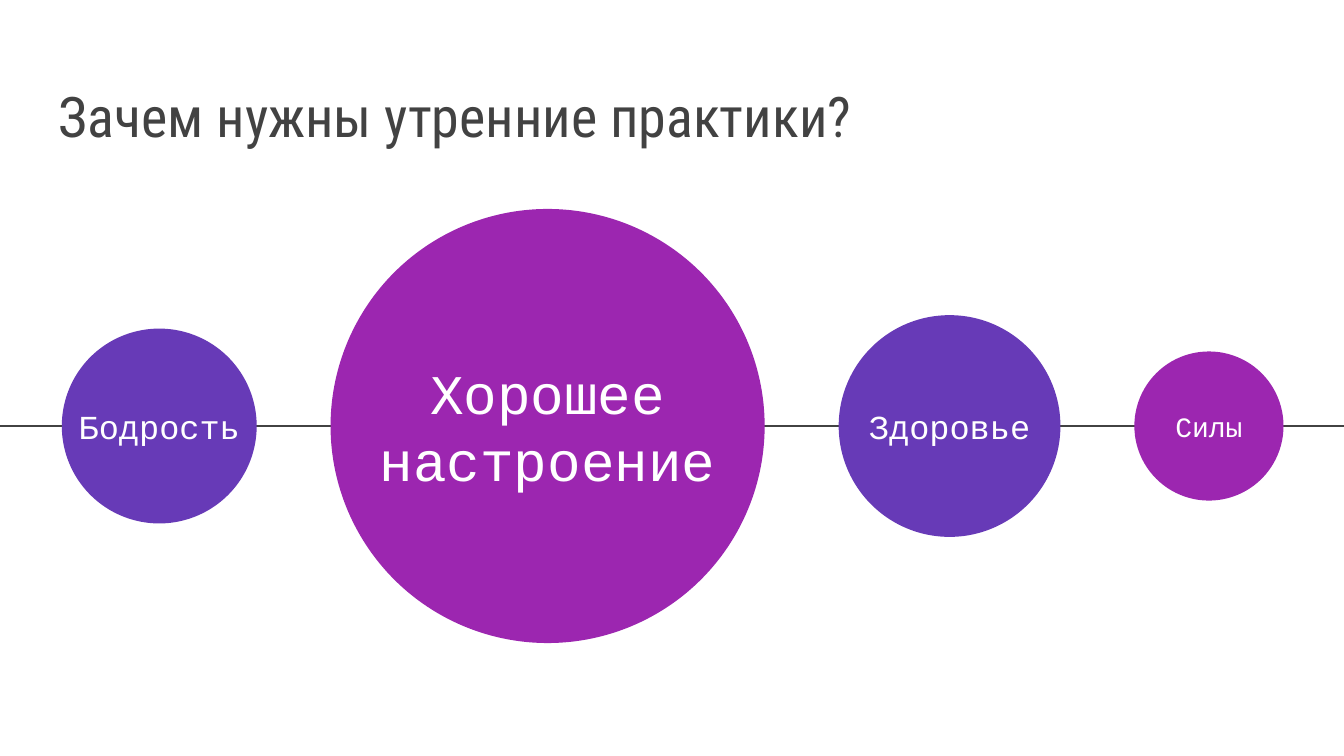
from lxml.etree import SubElement
from pptx import Presentation
from pptx.dml.color import RGBColor
from pptx.enum.shapes import MSO_CONNECTOR, MSO_SHAPE
from pptx.enum.text import MSO_ANCHOR, PP_ALIGN
from pptx.oxml.ns import qn
from pptx.util import Inches, Pt

# Slide grid, in inches
WIDTH = 10
HEIGHT = WIDTH * 9 / 16
AXIS = 3.17
FIRST_LEFT, GAP = 0.46, 0.55
LABEL_HEIGHT = 0.66

GRAY = RGBColor(0x42, 0x42, 0x42)
WHITE = RGBColor(0xFF, 0xFF, 0xFF)
VIOLET = RGBColor(0x67, 0x3A, 0xB7)
PURPLE = RGBColor(0x9C, 0x26, 0xB0)

# Label, diameter, text size, fill
BENEFITS = [
    ("Бодрость", 1.45, 18, VIOLET),
    ("Хорошее настроение", 3.23, 30, PURPLE),
    ("Здоровье", 1.65, 18, VIOLET),
    ("Силы", 1.11, 15, PURPLE),
]


def add_text(page, text, left, top, width, height, *, font, size, color,
             align=PP_ALIGN.LEFT, anchor=MSO_ANCHOR.MIDDLE):
    box = page.shapes.add_textbox(*map(Inches, (left, top, width, height)))
    frame = box.text_frame
    frame.word_wrap = True
    frame.vertical_anchor = anchor
    frame.margin_left = frame.margin_right = Inches(0.1)
    frame.margin_top = frame.margin_bottom = Inches(0.1)
    para = frame.paragraphs[0]
    para.alignment = align
    span = para.add_run()
    span.text = text
    span.font.name = font
    span.font.size = Pt(size)
    span.font.color.rgb = color


def add_axis(page):
    axis = page.shapes.add_connector(
        MSO_CONNECTOR.STRAIGHT, 0, Inches(AXIS), Inches(WIDTH), Inches(AXIS))
    axis.line.color.rgb = GRAY
    axis.line.width = Pt(1.5)
    SubElement(axis.element.spPr, qn("a:effectLst"))


def add_circle(page, left, diameter, fill):
    circle = page.shapes.add_shape(
        MSO_SHAPE.OVAL, Inches(left), Inches(AXIS - diameter / 2),
        Inches(diameter), Inches(diameter))
    circle.shadow.inherit = False
    circle.fill.solid()
    circle.fill.fore_color.rgb = fill
    circle.line.fill.background()


def main():
    deck = Presentation()
    deck.slide_width, deck.slide_height = Inches(WIDTH), Inches(HEIGHT)
    page = deck.slides.add_slide(deck.slide_layouts[6])

    # Axis behind the circles, and title
    add_axis(page)
    add_text(page, "Зачем нужны утренние практики?", 0.34, 0.41, 9.32, 0.8,
             font="Roboto Condensed", size=30, color=GRAY,
             anchor=MSO_ANCHOR.BOTTOM)

    # Circles centred on the axis with equal gaps
    left = FIRST_LEFT
    for label, diameter, size, fill in BENEFITS:
        add_circle(page, left, diameter, fill)
        add_text(page, label, left, AXIS - LABEL_HEIGHT / 2, diameter,
                 LABEL_HEIGHT, font="Courier New", size=size, color=WHITE,
                 align=PP_ALIGN.CENTER)
        left += diameter + GAP

    deck.save("out.pptx")


if __name__ == "__main__":
    main()
